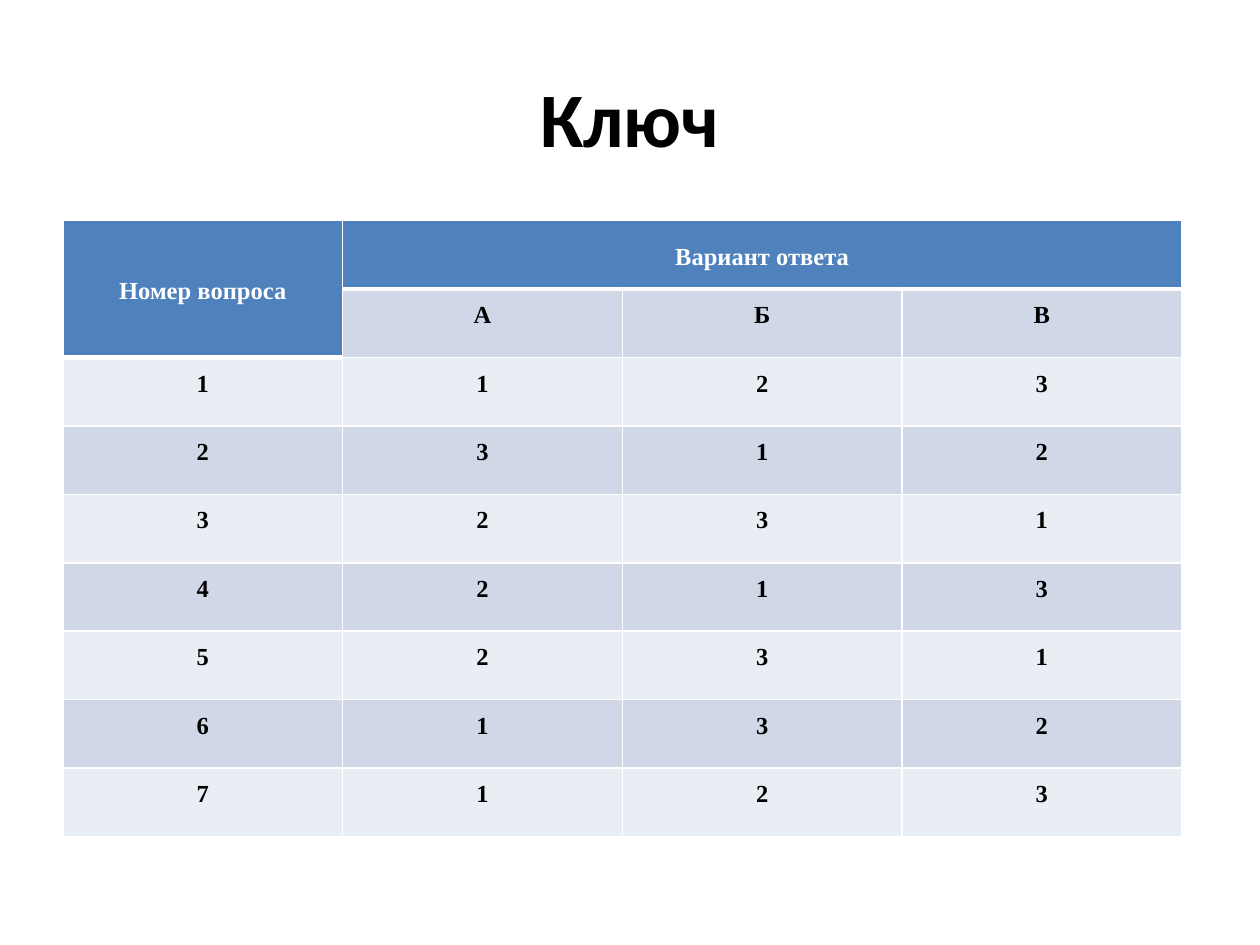
from dataclasses import dataclass

from lxml.etree import SubElement
from pptx import Presentation
from pptx.dml.color import RGBColor
from pptx.enum.text import MSO_ANCHOR, PP_ALIGN
from pptx.oxml.ns import qn
from pptx.util import Inches, Pt


@dataclass(frozen=True)
class Theme:
    title_font: str = "Calibri"
    table_font: str = "Times New Roman"
    title_size: int = 44
    table_size: int = 14
    dark: str = "000000"
    light: str = "FFFFFF"
    header: str = "4F81BD"
    bands: tuple = ("E9EDF4", "D0D8E8")
    thin: int = 1
    thick: int = 3


THEME = Theme()

HEADER = ["Номер вопроса", "Вариант ответа", "", ""]
OPTIONS = ["", "А", "Б", "В"]
KEY = ["123", "312", "231", "213", "231", "132", "123"]
ROWS = [HEADER, OPTIONS] + [[str(n), *scores] for n, scores in enumerate(KEY, 1)]


def add_run(p, text, font, size, color):
    p.alignment = PP_ALIGN.CENTER
    r = p.add_run()
    r.text = text
    r.font.name = font
    r.font.size = Pt(size)
    r.font.bold = True
    r.font.color.rgb = RGBColor.from_string(color)


def set_borders(cell, top, bottom):
    """Draw all four sides; call before filling, as the schema puts lines first."""
    tc_pr = cell._tc.get_or_add_tcPr()
    widths = {"a:lnL": THEME.thin, "a:lnR": THEME.thin, "a:lnT": top, "a:lnB": bottom}
    for tag, width in widths.items():
        ln = SubElement(tc_pr, qn(tag), w=str(Pt(width)))
        fill = SubElement(ln, qn("a:solidFill"))
        SubElement(fill, qn("a:srgbClr"), val=THEME.light)


def is_header(row, col):
    return row == 0 or (row, col) == (1, 0)


def style_cell(cell, row, col, text):
    header = is_header(row, col)
    below_header = not header and is_header(row - 1, col)
    set_borders(cell,
                top=THEME.thick if below_header else THEME.thin,
                bottom=THEME.thick if header else THEME.thin)
    cell.fill.solid()
    color = THEME.header if header else THEME.bands[row % 2]
    cell.fill.fore_color.rgb = RGBColor.from_string(color)
    cell.vertical_anchor = MSO_ANCHOR.MIDDLE if header else MSO_ANCHOR.TOP
    cell.margin_left = cell.margin_right = Inches(0.07)
    cell.margin_top = cell.margin_bottom = Inches(0.07)
    if text:
        p = cell.text_frame.paragraphs[0]
        p.line_spacing = 1.15
        p.space_after = Pt(10)
        add_run(p, text, THEME.table_font, THEME.table_size,
                THEME.light if header else THEME.dark)


def add_title(slide, text, left, top, width, height):
    tf = slide.shapes.add_textbox(left, top, width, height).text_frame
    tf.word_wrap = True
    tf.vertical_anchor = MSO_ANCHOR.MIDDLE
    add_run(tf.paragraphs[0], text, THEME.title_font, THEME.title_size, THEME.dark)


def add_key_table(slide, rows, left, top, width, height):
    table = slide.shapes.add_table(len(rows), len(rows[0]), left, top, width, height).table
    table.cell(0, 0).merge(table.cell(1, 0))
    table.cell(0, 1).merge(table.cell(0, 3))
    for i, row in enumerate(rows):
        for j, text in enumerate(row):
            style_cell(table.cell(i, j), i, j, text)


def main():
    prs = Presentation()
    prs.slide_width, prs.slide_height = Inches(10), Inches(7.5)
    slide = prs.slides.add_slide(prs.slide_layouts[6])
    add_title(slide, "Ключ", Inches(0.5), Inches(0.3), Inches(9), Inches(1.25))
    add_key_table(slide, ROWS, Inches(0.5), Inches(1.75), Inches(8.88), Inches(4.89))
    prs.save("out.pptx")


if __name__ == "__main__":
    main()
